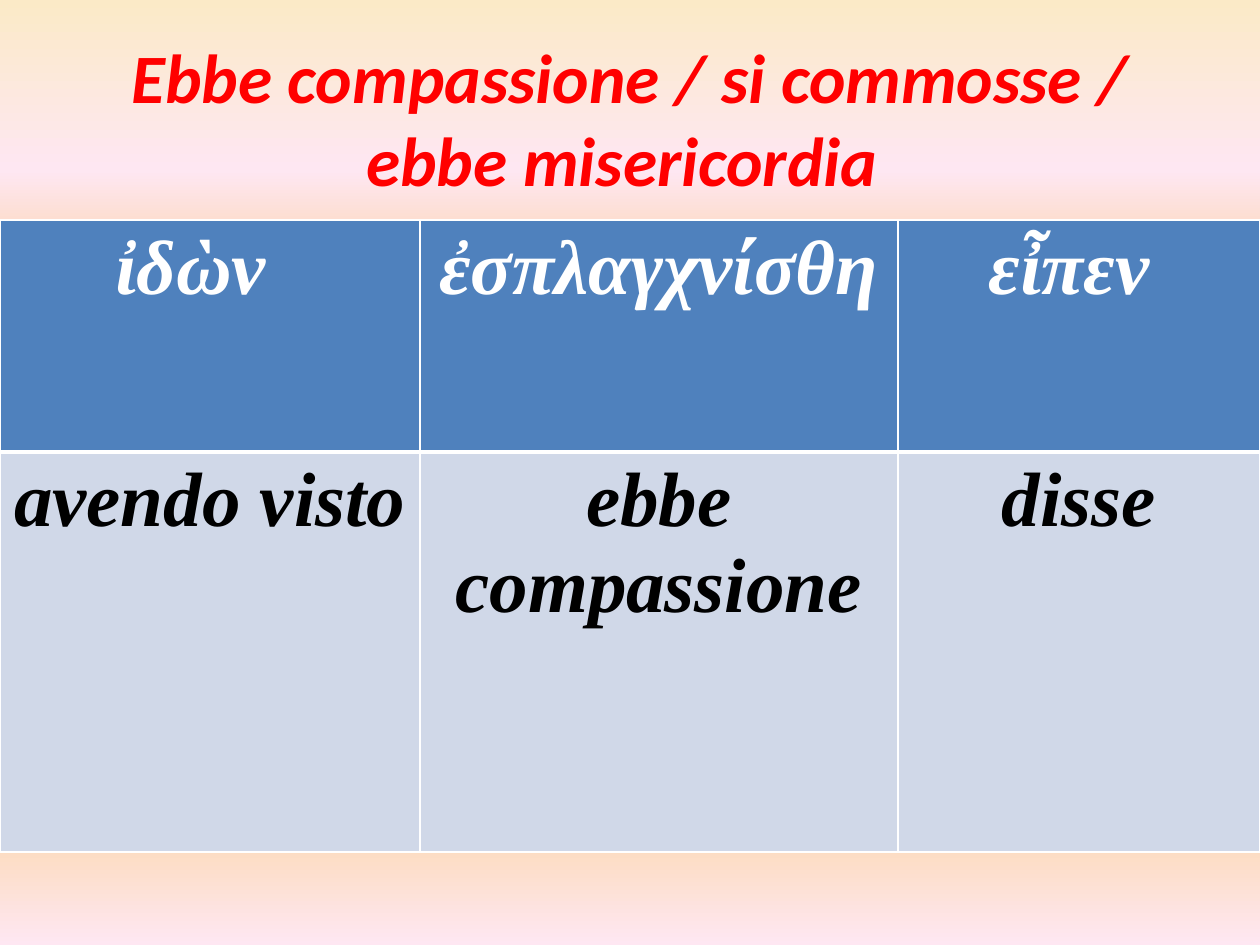
from lxml.etree import SubElement
from pptx import Presentation
from pptx.dml.color import RGBColor
from pptx.enum.text import MSO_ANCHOR, PP_ALIGN
from pptx.oxml import parse_xml
from pptx.oxml.ns import nsdecls, qn
from pptx.util import Pt

EMU_PER_PX = 914400 / 126
COLOURS = {
    "title": "FF0000",
    "header fill": "4F81BD",
    "header text": "FFFFFF",
    "body fill": "D0D8E8",
    "body text": "000000",
    "border": "FFFFFF",
}
BACKGROUND_STOPS = {
    0: "FBEAC7", 18: "FEE7F2", 36: "FAC77D",
    61: "FBA97D", 82: "FBD49C", 100: "FEE7F2",
}
TITLE = "Ebbe compassione / si commosse / ebbe misericordia "
WORDS = [
    ["ἰδὼν  ", "ἐσπλαγχνίσθη  ", "εἶπεν "],
    ["avendo visto ", "ebbe compassione", "disse"],
]
COLUMN_WIDTHS = [420, 478, 362]
ROW_HEIGHTS = [232, 400]


def px(length):
    return round(length * EMU_PER_PX)


def paint_background(page):
    fill = page.background.fill
    fill.gradient()
    fill.gradient_angle = 270
    stops = page.element.xpath(".//p:bg//a:gsLst")[0]
    for stop in list(stops):
        stops.remove(stop)
    for position, colour in BACKGROUND_STOPS.items():
        stop = SubElement(stops, qn("a:gs"), pos=str(position * 1000))
        SubElement(stop, qn("a:srgbClr"), val=colour)


def write_centred(frame, text, font, size, colour):
    para = frame.paragraphs[0]
    para.alignment = PP_ALIGN.CENTER
    span = para.add_run()
    span.text = text
    span.font.name = font
    span.font.size = Pt(size)
    span.font.bold = span.font.italic = True
    span.font.color.rgb = RGBColor.from_string(COLOURS[colour])


def add_title(page, left, top, width, height):
    box = page.shapes.add_textbox(px(left), px(top), px(width), px(height))
    frame = box.text_frame
    frame.word_wrap = True
    frame.vertical_anchor = MSO_ANCHOR.MIDDLE
    write_centred(frame, TITLE, "Calibri", 39.6, "title")


def set_borders(cell, widths):
    """Draw the cell's edges; widths maps L, R, T and B to points."""
    properties = cell._tc.get_or_add_tcPr()
    for index, (side, width) in enumerate(widths.items()):
        line = parse_xml(
            f'<a:ln{side} {nsdecls("a")} w="{Pt(width)}"><a:solidFill>'
            f'<a:srgbClr val="{COLOURS["border"]}"/></a:solidFill></a:ln{side}>'
        )
        properties.insert(index, line)


def add_word_table(page, left, top):
    table = page.shapes.add_table(
        len(ROW_HEIGHTS), len(COLUMN_WIDTHS), px(left), px(top),
        px(sum(COLUMN_WIDTHS)), px(sum(ROW_HEIGHTS)),
    ).table
    for column, width in zip(table.columns, COLUMN_WIDTHS):
        column.width = px(width)
    for row, height in zip(table.rows, ROW_HEIGHTS):
        row.height = px(height)

    styles = [
        ("header", {"L": 1, "R": 1, "T": 1, "B": 3}),
        ("body", {"L": 1, "R": 1, "T": 3, "B": 1}),
    ]
    for row, words, (kind, widths) in zip(table.rows, WORDS, styles):
        for cell, word in zip(row.cells, words):
            cell.fill.solid()
            cell.fill.fore_color.rgb = RGBColor.from_string(COLOURS[f"{kind} fill"])
            set_borders(cell, widths)
            write_centred(cell.text_frame, word, "Times New Roman", 44, f"{kind} text")


def main():
    deck = Presentation()
    deck.slide_width, deck.slide_height = px(1260), px(945)
    page = deck.slides.add_slide(deck.slide_layouts[6])
    paint_background(page)
    add_title(page, 63, 38, 1134, 158)
    add_word_table(page, 0, 220)
    deck.save("out.pptx")


if __name__ == "__main__":
    main()
